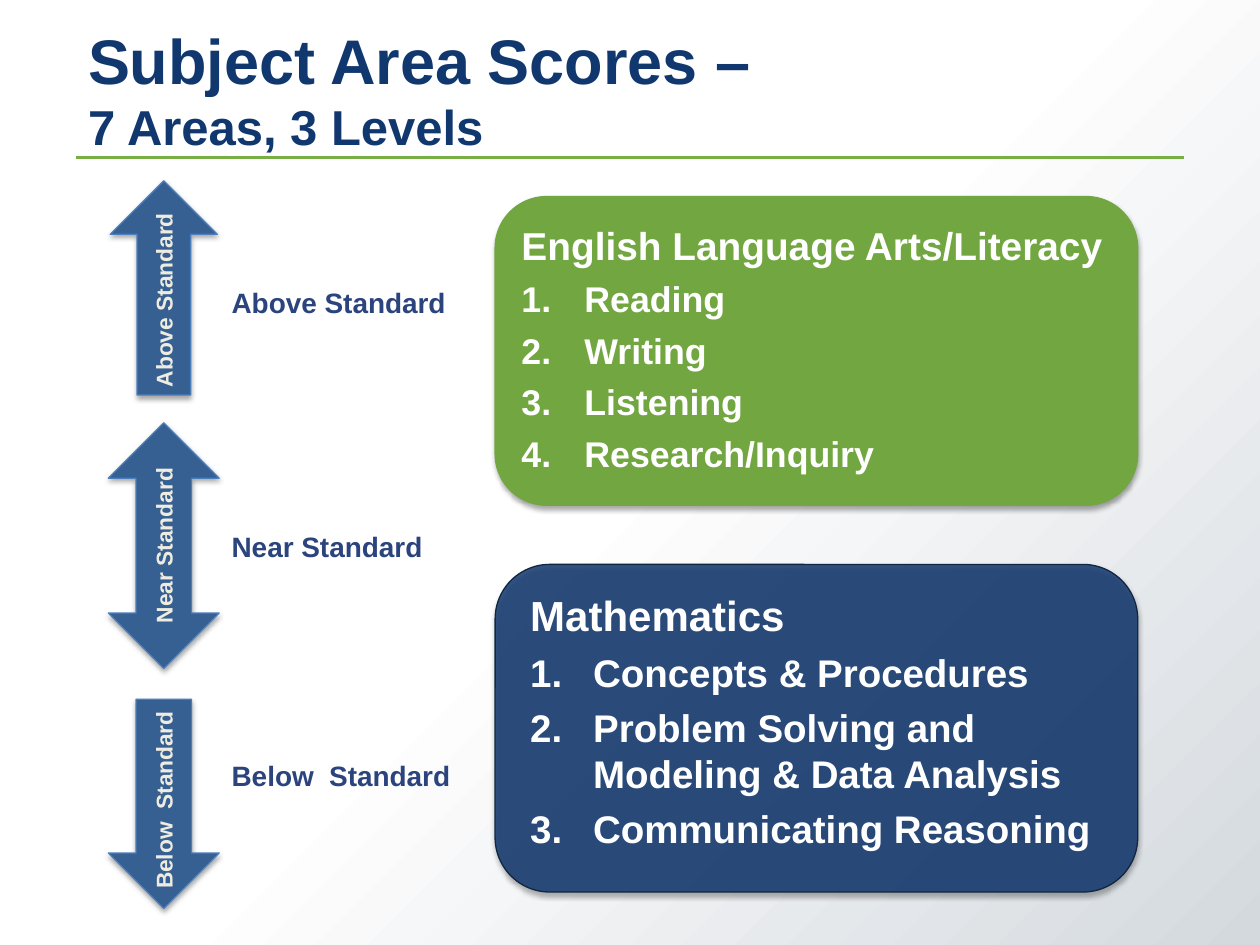
"""Build the subject area scores slide: three level arrows and two subject panels."""
from lxml import etree
from pptx import Presentation
from pptx import util as u
from pptx.dml.color import RGBColor
from pptx.enum import shapes, text
from pptx.oxml.ns import qn

THEME = {
    "font": "Arial", "navy": "11376F", "green": "71A640", "rule": "78AF44",
    "arrow": "376092", "arrow_line": "4B7EBC", "label": "2B447D",
    "caption": "EEECE1", "white": "FFFFFF", "math_line": "10273F",
    "shade": "D4D9DE", "shadow": "000000",
    "title": 36, "subtitle": 28, "label_size": 16, "caption_size": 13,
}
TITLE = [("Subject Area Scores –", THEME["title"]), ("7 Areas, 3 Levels", THEME["subtitle"])]
LEFT, CENTER = text.PP_ALIGN.LEFT, text.PP_ALIGN.CENTER
LEVELS = [
    {"name": "Above Standard", "kind": "LEFT_ARROW", "turn": 90, "middle": 2.285, "size": (1.7, 0.85),
     "caption": (2.32, 1.7, 0.2), "align": LEFT, "label": (2.22, 2)},
    {"name": "Near Standard", "kind": "LEFT_RIGHT_ARROW", "turn": 270, "middle": 4.33, "size": (1.95, 0.88),
     "caption": (4.33, 1.95, 0.32), "align": CENTER, "label": (4.15, 2.1)},
    {"name": "Below  Standard", "kind": "LEFT_ARROW", "turn": 270, "middle": 6.38, "size": (1.66, 0.88),
     "caption": (6.35, 1.76, 0.2), "align": CENTER, "label": (5.97, 2)},
]
PANELS = [
    {"head": "English Language Arts/Literacy", "sizes": (22.2, 20.4), "top": 1.56, "height": 2.45,
     "fill": "green", "line": "green", "alpha": 100, "body": (4.04, 4.99),
     "items": ["Reading", "Writing", "Listening", "Research/Inquiry"]},
    {"head": "Mathematics", "sizes": (24, 22), "top": 4.48, "height": 2.6,
     "fill": "navy", "line": "math_line", "alpha": 84, "body": (4.11, 4.74),
     "items": ["Concepts & Procedures", "Problem Solving and Modeling & Data Analysis",
               "Communicating Reasoning"]},
]
ARROW_CENTER, CAPTION_EDGE, LABEL_LEFT = 1.3, 1.14, 1.74
PANEL_LEFT, PANEL_WIDTH, BODY_DROP, BODY_HEIGHT = 3.93, 5.1, 0.15, 2.3


def color(name):
    return RGBColor.from_string(THEME[name])


def inches(*values):
    return [u.Inches(value) for value in values]


def add_span(para, words, size, tint):
    span = para.add_run()
    span.text = words
    values = {"name": THEME["font"], "size": u.Pt(size), "bold": True}
    for key, value in values.items():
        setattr(span.font, key, value)
    span.font.color.rgb = color(tint)


def add_box(page, area, **values):
    box = page.shapes.add_textbox(*inches(*area))
    for key, value in {"word_wrap": True, **values}.items():
        setattr(box.text_frame, key, value)
    return box


def add_solid(page, kind, area, fill, line, alpha=100):
    solid = page.shapes.add_shape(getattr(shapes.MSO_SHAPE, kind), *inches(*area))
    solid.fill.solid()
    solid.fill.fore_color.rgb = color(fill)
    solid.line.color.rgb = color(line)
    solid.line.width = u.Pt(0.75)
    solid.shadow.inherit = False
    properties = solid._element.spPr
    if alpha < 100:
        tint = properties.find(qn("a:solidFill")).find(qn("a:srgbClr"))
        etree.SubElement(tint, qn("a:alpha"), val=str(alpha * 1000))
    shadow = etree.SubElement(properties.find(qn("a:effectLst")), qn("a:outerShdw"),
                              blurRad=str(u.Pt(3.1)), dist=str(u.Pt(1.8)), dir="5400000", rotWithShape="0")
    tint = etree.SubElement(shadow, qn("a:srgbClr"), val=THEME["shadow"])
    etree.SubElement(tint, qn("a:alpha"), val="35000")
    return solid


def add_background(page):
    fill = page.background.fill
    fill.gradient()
    fill.gradient_angle = 315
    for stop, position, tint in zip(fill.gradient_stops, (0.5, 1), ("white", "shade")):
        stop.position = position
        stop.color.rgb = color(tint)


def add_title(page):
    rule = page.shapes.add_connector(shapes.MSO_CONNECTOR.STRAIGHT, *inches(0.6, 1.25, 9.4, 1.25))
    rule.line.color.rgb = color("rule")
    rule.line.width = u.Pt(2)
    etree.SubElement(rule._element.spPr, qn("a:effectLst"))
    box = add_box(page, (0.6, 0.39, 8.81, 0.62), vertical_anchor=text.MSO_ANCHOR.MIDDLE)
    para = box.text_frame.paragraphs[0]
    for index, (words, size) in enumerate(TITLE):
        if index:
            para.add_line_break()
        add_span(para, words, size, "navy")


def add_panel(page, panel):
    add_solid(page, "ROUNDED_RECTANGLE", (PANEL_LEFT, panel["top"], PANEL_WIDTH, panel["height"]),
              panel["fill"], panel["line"], panel["alpha"])
    left, width = panel["body"]
    frame = add_box(page, (left, panel["top"] + BODY_DROP, width, BODY_HEIGHT)).text_frame
    for index, words in enumerate([panel["head"], *panel["items"]]):
        para = frame.add_paragraph() if index else frame.paragraphs[0]
        para.space_before = u.Pt(5)
        add_span(para, words, panel["sizes"][min(index, 1)], "white")
        indent = u.Inches(0.5 if index else 0.38)
        properties = para._p.get_or_add_pPr()
        properties.set("marL", str(indent))
        properties.set("indent", str(-indent))
        if index:
            etree.SubElement(properties, qn("a:buFont"), typeface=THEME["font"])
            etree.SubElement(properties, qn("a:buAutoNum"), type="arabicPeriod")


def add_level(page, level):
    grow = text.MSO_AUTO_SIZE.SHAPE_TO_FIT_TEXT
    top, width = level["label"]
    label = add_box(page, (LABEL_LEFT, top, width, 0.37), auto_size=grow)
    add_span(label.text_frame.paragraphs[0], level["name"], THEME["label_size"], "label")

    length, breadth = level["size"]
    area = (ARROW_CENTER - length / 2, level["middle"] - breadth / 2, length, breadth)
    arrow = add_solid(page, level["kind"], area, "arrow", "arrow_line")
    arrow.rotation = level["turn"]

    middle, length, height = level["caption"]
    center = CAPTION_EDGE + height / 2
    caption = add_box(page, (center - length / 2, middle - height / 2, length, height), auto_size=grow)
    caption.rotation = 270
    para = caption.text_frame.paragraphs[0]
    para.alignment = level["align"]
    add_span(para, level["name"], THEME["caption_size"], "caption")


def main():
    deck = Presentation()
    deck.slide_width, deck.slide_height = inches(10, 7.5)
    page = deck.slides.add_slide(deck.slide_layouts[6])
    add_background(page)
    add_title(page)
    for panel in PANELS:
        add_panel(page, panel)
    for level in LEVELS:
        add_level(page, level)
    deck.save("out.pptx")


if __name__ == "__main__":
    main()
